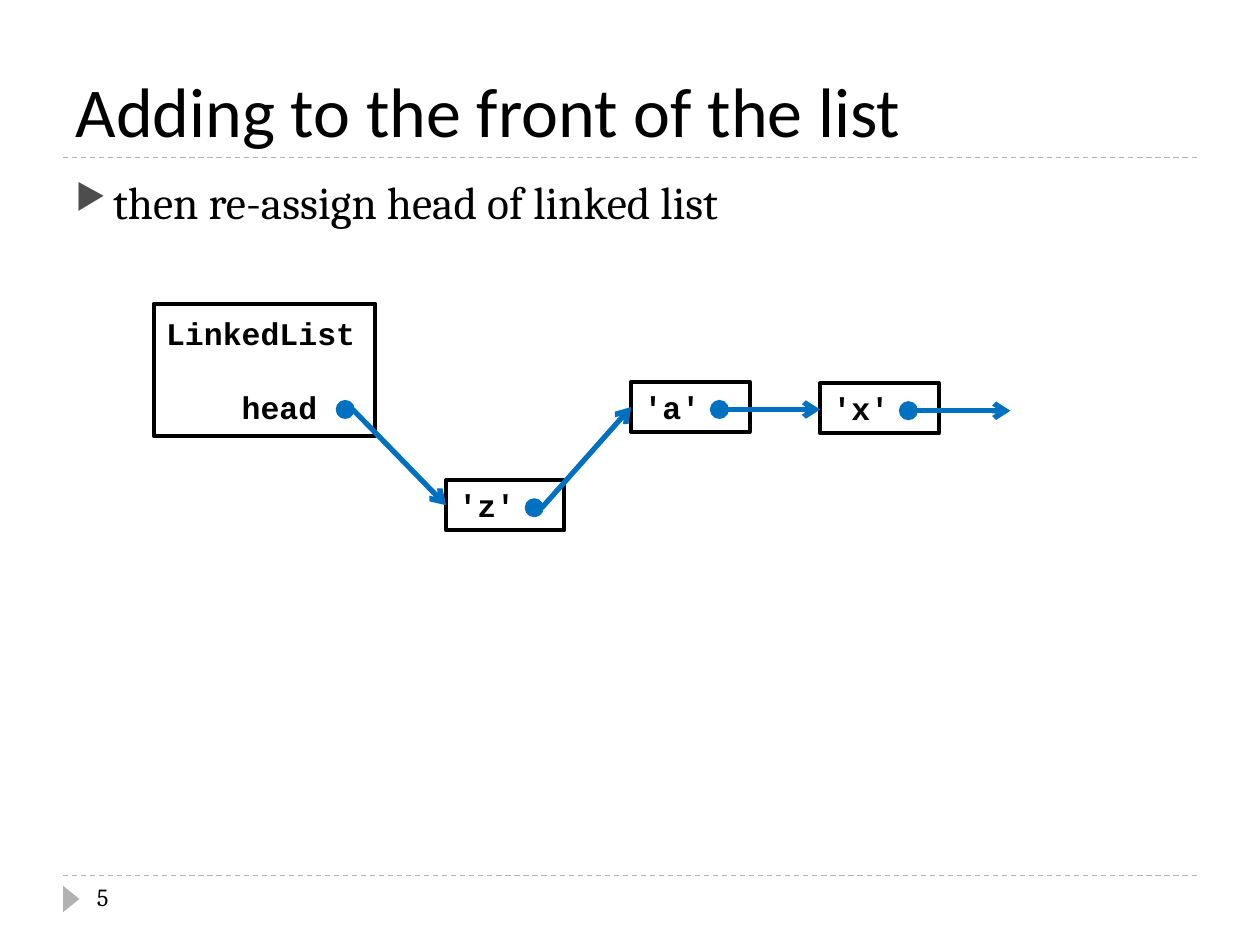
from dataclasses import dataclass
from pptx import Presentation
from pptx.dml.color import RGBColor
from pptx.enum.dml import MSO_LINE
from pptx.enum.shapes import MSO_CONNECTOR, MSO_SHAPE
from pptx.enum.text import MSO_ANCHOR, MSO_AUTO_SIZE, PP_ALIGN
from pptx.oxml import parse_xml
from pptx.oxml.ns import nsdecls
from pptx.oxml.xmlchemy import OxmlElement
from pptx.util import Inches, Pt


@dataclass(frozen=True)
class Theme:
    ink: str = "000000"
    blue: str = "0070C0"
    rule: str = "B2B2B2"
    mark: str = "4D4D4D"
    head: str = "Calibri"
    body: str = "Cambria"
    code: str = "Courier New"
    big: int = 40
    mid: int = 26
    note: int = 18
    small: int = 14


T = Theme()


def tint(name):
    return RGBColor.from_string(name)


def write(para, text, font=T.body, size=T.small, bold=False, before=0, indent=0):
    para.alignment = PP_ALIGN.LEFT
    para.space_before = Pt(before)
    if indent:
        para._p.get_or_add_pPr().set("marL", str(Inches(indent)))
    run = para.add_run()
    run.text = text
    run.font.name = font
    run.font.size = Pt(size)
    run.font.bold = bold
    run.font.color.rgb = tint(T.ink)


def place(shape, box):
    shape.left, shape.top, shape.width, shape.height = map(Inches, box)


def label(slide, box):
    shape = slide.shapes.add_textbox(*map(Inches, box))
    shape.text_frame.word_wrap = True
    return shape.text_frame.paragraphs[0]


def draw(slide, kind, box, fill=None, edge=None, width=0):
    shape = slide.shapes.add_shape(kind, *map(Inches, box))
    shape.shadow.inherit = False
    if fill:
        shape.fill.solid()
        shape.fill.fore_color.rgb = tint(fill)
    else:
        shape.fill.background()
    if edge:
        shape.line.color.rgb = tint(edge)
        shape.line.width = Pt(width)
    else:
        shape.line.fill.background()
    return shape


def link(slide, start, end, color, width):
    line = slide.shapes.add_connector(
        MSO_CONNECTOR.STRAIGHT, *map(Inches, (*start, *end)))
    line.line.color.rgb = tint(color)
    line.line.width = Pt(width)
    line._element.spPr.append(OxmlElement("a:effectLst"))
    return line


def rule(slide, left, top, width):
    line = link(slide, (left, top), (left + width, top), T.rule, 0.75)
    line.line.dash_style = MSO_LINE.DASH


def arrow(slide, start, end):
    line = link(slide, start, end, T.blue, 3)
    tail = parse_xml(f'<a:tailEnd {nsdecls("a")} type="arrow"/>')
    line.line._get_or_add_ln().append(tail)


def dot(slide, x, y, size=0.13):
    box = (x - size / 2, y - size / 2, size, size)
    draw(slide, MSO_SHAPE.OVAL, box, T.blue, T.blue, 1.5)


def cell(slide, box, text):
    shape = draw(slide, MSO_SHAPE.RECTANGLE, box, edge=T.ink, width=2.25)
    frame = shape.text_frame
    frame.vertical_anchor = MSO_ANCHOR.MIDDLE
    write(frame.paragraphs[0], text, T.code, T.note, True)
    return frame


def title(slide, box, text):
    left, top, width, height = box
    shape = slide.shapes.title
    place(shape, box)
    frame = shape.text_frame
    frame.auto_size = MSO_AUTO_SIZE.NONE
    frame.vertical_anchor = MSO_ANCHOR.BOTTOM
    write(frame.paragraphs[0], text, T.head, T.big)
    rule(slide, left, top + height, width)


def body(slide, box, text):
    para = label(slide, box)
    write(para, text, size=T.mid, before=6, indent=0.3)
    prop = para._p.get_or_add_pPr()
    prop.set("indent", str(-Inches(0.3)))
    for part in (f'buClr {nsdecls("a")}><a:srgbClr val="{T.mark}"/></a:buClr>',
                 f'buSzPct {nsdecls("a")} val="76000"/>',
                 f'buChar {nsdecls("a")} char="▶"/>'):
        prop.append(parse_xml("<a:" + part))


def foot(slide, box, text):
    left, top, width, height = box
    rule(slide, left, top, width)
    mark = draw(slide, MSO_SHAPE.ISOSCELES_TRIANGLE,
                (left - 0.04, top + 0.12, 0.21, 0.13), T.rule)
    mark.rotation = 90
    write(label(slide, (left + 0.17, top, 2.17, height)), text)


def chain(slide, box):
    left, top, width, height = box
    frame = cell(slide, (left, top, 1.76, height), "LinkedList")
    write(frame.add_paragraph(), "head", T.code, T.note, True,
          before=20.4, indent=0.6)
    wide, high = 0.94, 0.4
    nodes = [("'z'", 2.32, 1.4), ("'a'", 3.79, 0.62), ("'x'", 5.29, 0.63)]
    dots = [(left + 1.52, top + 0.84)]
    ends = []
    for text, x, y in nodes:
        x, y = left + x, top + y
        cell(slide, (x, y, wide, high), text)
        dots.append((x + 0.7, y + 0.22))
        ends.append((x, y + high / 2))
    ends.append((left + width, dots[-1][1]))
    for (x, y), (far, low) in zip(dots, ends):
        dot(slide, x, y)
        if abs(low - y) < 0.1:
            arrow(slide, (x, y), (far, y))
        else:
            arrow(slide, (x + 0.06, y), (far, low))


def main():
    deck = Presentation()
    deck.slide_width, deck.slide_height = Inches(10), Inches(7.5)
    slide = deck.slides.add_slide(deck.slide_layouts[5])
    title(slide, (0.5, 0.17, 9, 1.08), "Adding to the front of the list")
    body(slide, (0.5, 1.33, 9, 5.4), "then re-assign head of linked list")
    chain(slide, (1.22, 2.41, 6.8, 1.05))
    foot(slide, (0.5, 6.95, 9, 0.4), "5")
    deck.save("out.pptx")


if __name__ == "__main__":
    main()
